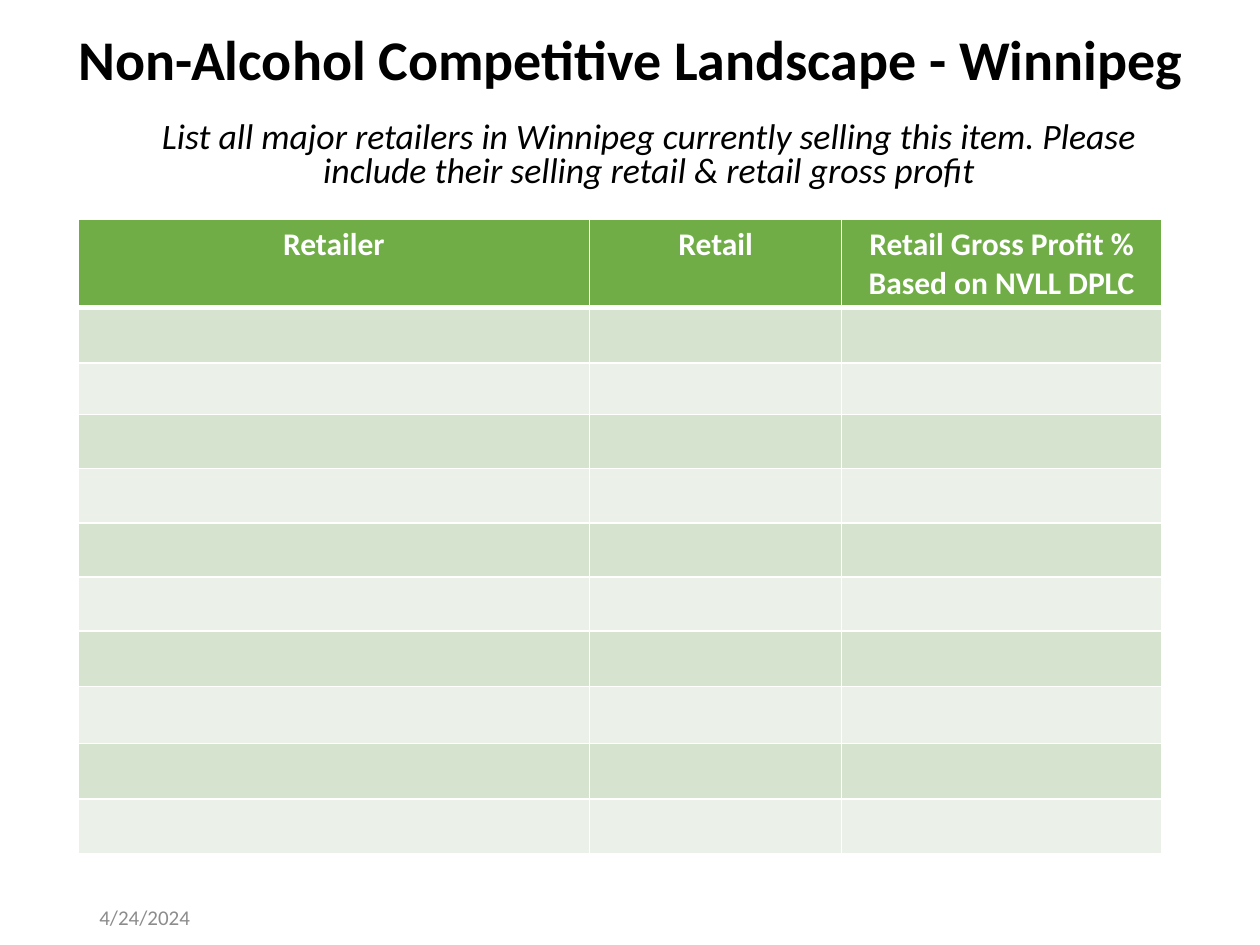
"""Build the competitive landscape slide with its blank retailer table."""
from dataclasses import dataclass

from lxml import etree
from pptx import Presentation
from pptx.dml.color import RGBColor
from pptx.enum import text
from pptx.oxml import ns
from pptx.util import Inches, Pt


@dataclass(frozen=True)
class Theme:
    font: str = "Calibri"
    black: str = "000000"
    white: str = "FFFFFF"
    grey: str = "8C8C8C"
    header: str = "70AD47"
    bands: tuple[str, str] = ("D5E3CF", "EBF1E9")
    title_size: float = 32
    subtitle_size: float = 20.4
    header_size: float = 18
    date_size: float = 12
    border: float = 1
    header_border: float = 3


@dataclass(frozen=True)
class Box:
    left: float
    top: float
    width: float
    height: float

    def lengths(self) -> tuple:
        return tuple(map(Inches, (self.left, self.top, self.width, self.height)))


@dataclass(frozen=True)
class Column:
    heading: str
    width: float


THEME = Theme()
COLUMNS = (
    Column("Retailer", 4.06),
    Column("Retail", 2),
    Column("Retail Gross Profit % Based on NVLL DPLC", 2.54),
)
ROW_HEIGHTS = (0.7, 0.44, 0.41, 0.43, 0.43, 0.43, 0.43, 0.44, 0.45, 0.44, 0.44)


def write(frame, content: str, *, size: float, color: str, bold: bool = False,
          italic: bool = False, align=text.PP_ALIGN.CENTER, spacing: float = 1) -> None:
    frame.word_wrap = True
    paragraph = frame.paragraphs[0]
    paragraph.alignment = align
    paragraph.line_spacing = spacing
    run = paragraph.add_run()
    run.text = content
    font = run.font
    font.name, font.size, font.bold, font.italic = THEME.font, Pt(size), bold, italic
    font.color.rgb = RGBColor.from_string(color)


def set_borders(cell, bottom: float) -> None:
    properties = cell._tc.get_or_add_tcPr()
    widths = {"lnL": THEME.border, "lnR": THEME.border, "lnT": THEME.border, "lnB": bottom}
    for position, (side, width) in enumerate(widths.items()):
        line = etree.Element(ns.qn(f"a:{side}"), w=str(Pt(width)))
        fill = etree.SubElement(line, ns.qn("a:solidFill"))
        etree.SubElement(fill, ns.qn("a:srgbClr"), val=THEME.white)
        properties.insert(position, line)


def add_title(slide, content: str, box: Box) -> None:
    title = slide.shapes.title
    title.left, title.top, title.width, title.height = box.lengths()
    frame = title.text_frame
    frame.auto_size = text.MSO_AUTO_SIZE.NONE
    frame.vertical_anchor = text.MSO_ANCHOR.MIDDLE
    frame.margin_left = frame.margin_right = 0
    write(frame, content, size=THEME.title_size, color=THEME.black, bold=True, spacing=0.9)


def add_text(slide, content: str, box: Box, anchor=text.MSO_ANCHOR.TOP, **style) -> None:
    frame = slide.shapes.add_textbox(*box.lengths()).text_frame
    frame.vertical_anchor = anchor
    write(frame, content, **style)


def add_retailer_table(slide, left: float, top: float) -> None:
    box = Box(left, top, sum(column.width for column in COLUMNS), sum(ROW_HEIGHTS))
    table = slide.shapes.add_table(len(ROW_HEIGHTS), len(COLUMNS), *box.lengths()).table
    for row, height in zip(table.rows, ROW_HEIGHTS):
        row.height = Inches(height)
    for index, column in enumerate(COLUMNS):
        table.columns[index].width = Inches(column.width)
        write(table.cell(0, index).text_frame, column.heading,
              size=THEME.header_size, color=THEME.white, bold=True)
    for number, row in enumerate(table.rows):
        color = THEME.bands[(number - 1) % 2] if number else THEME.header
        for cell in row.cells:
            cell.fill.solid()
            cell.fill.fore_color.rgb = RGBColor.from_string(color)
            set_borders(cell, THEME.border if number else THEME.header_border)


def main() -> None:
    presentation = Presentation()
    presentation.slide_width, presentation.slide_height = Inches(10), Inches(7.5)
    slide = presentation.slides.add_slide(presentation.slide_layouts[5])
    add_title(slide, "Non-Alcohol Competitive Landscape - Winnipeg", Box(0.51, 0.16, 9, 0.67))
    add_text(slide, "List all major retailers in Winnipeg currently selling this item. "
             "Please include their selling retail & retail gross profit",
             Box(0.92, 0.92, 8.46, 0.67), size=THEME.subtitle_size,
             color=THEME.black, italic=True, spacing=0.8)
    add_text(slide, "4/24/2024", Box(0.69, 7.2, 2.25, 0.15), text.MSO_ANCHOR.MIDDLE,
             size=THEME.date_size, color=THEME.grey, align=text.PP_ALIGN.LEFT)
    add_retailer_table(slide, 0.62, 1.74)
    presentation.save("out.pptx")


if __name__ == "__main__":
    main()
